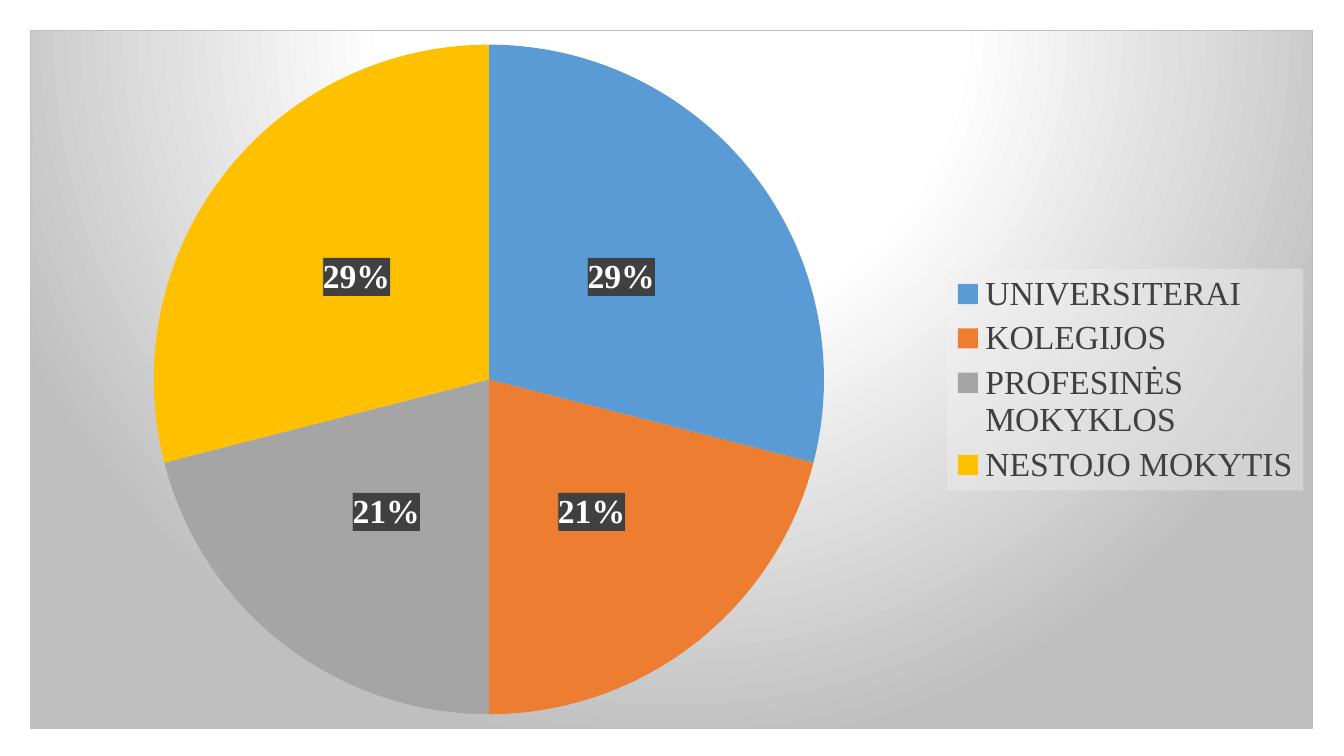
import pptx
import pptx.chart.data
import pptx.dml.color
import pptx.enum.chart
import pptx.oxml
import pptx.oxml.ns
import pptx.util

RGBColor = pptx.dml.color.RGBColor
Inches = pptx.util.Inches
Pt = pptx.util.Pt
qn = pptx.oxml.ns.qn

BLUE = RGBColor(0x5B, 0x9B, 0xD5)
ORANGE = RGBColor(0xED, 0x7D, 0x31)
GREY = RGBColor(0xA5, 0xA5, 0xA5)
GOLD = RGBColor(0xFF, 0xC0, 0x00)
WHITE = RGBColor(0xFF, 0xFF, 0xFF)
DARK = RGBColor(0x40, 0x40, 0x40)
BLACK = RGBColor(0x00, 0x00, 0x00)

CHOICES = [
    ("UNIVERSITERAI", 29, BLUE),
    ("KOLEGIJOS", 21, ORANGE),
    ("PROFESINĖS MOKYKLOS", 21, GREY),
    ("NESTOJO MOKYTIS", 29, GOLD),
]
FONT = "Times New Roman"
PIE_BOX = (0.096, 0.02, 0.523, 0.96)
LEGEND_BOX = (0.715, 0.341, 0.278, 0.318)

NAMESPACES = pptx.oxml.ns.nsdecls("c", "a")
BACKDROP = """<a:gradFill><a:gsLst>
<a:gs pos="0"><a:srgbClr val="FFFFFF"/></a:gs>
<a:gs pos="39000"><a:srgbClr val="FFFFFF"/></a:gs>
<a:gs pos="100000"><a:srgbClr val="BFBFBF"/></a:gs></a:gsLst>
<a:path path="circle"><a:fillToRect l="50000" t="-80000" r="50000" b="180000"/></a:path>
</a:gradFill><a:ln w="9525"><a:solidFill><a:srgbClr val="BFBFBF"/></a:solidFill></a:ln>"""
LEGEND_FILL = """<a:solidFill><a:srgbClr val="F2F2F2"><a:alpha val="39000"/></a:srgbClr>
</a:solidFill><a:ln><a:noFill/></a:ln>"""
LABEL_FILL = """<a:pattFill prst="dkVert"><a:fgClr><a:srgbClr val="404040"/></a:fgClr>
<a:bgClr><a:srgbClr val="595959"/></a:bgClr></a:pattFill><a:ln><a:noFill/></a:ln>"""


def shape_properties(content):
    return pptx.oxml.parse_xml(f"<c:spPr {NAMESPACES}>{content}</c:spPr>")


def manual_layout(box, target=""):
    modes = "".join(f'<c:{axis}Mode val="edge"/>' for axis in "xy")
    sizes = "".join(f'<c:{side} val="{value}"/>' for side, value in zip("xywh", box))
    return pptx.oxml.parse_xml(
        f"<c:layout {NAMESPACES}><c:manualLayout>{target}{modes}{sizes}</c:manualLayout></c:layout>"
    )


def drop_layout(parent):
    for layout in parent.findall(qn("c:layout")):
        parent.remove(layout)


def set_font(font, color, bold=False):
    font.name = FONT
    font.size = Pt(24)
    font.bold = bold
    font.color.rgb = color


deck = pptx.Presentation()
deck.slide_width = Inches(13.33)
deck.slide_height = Inches(7.5)
slide = deck.slides.add_slide(deck.slide_layouts[6])

survey = pptx.chart.data.CategoryChartData()
survey.categories = [name for name, share, color in CHOICES]
survey.add_series("Series 1", [share for name, share, color in CHOICES])
pie = slide.shapes.add_chart(
    pptx.enum.chart.XL_CHART_TYPE.PIE,
    Inches(0.3), Inches(0.3), Inches(12.72), Inches(6.93), survey,
).chart
pie.has_title = False
set_font(pie.font, BLACK)
pie.plots[0].vary_by_categories = True

shares = pie.plots[0].series[0]
for index, (name, share, color) in enumerate(CHOICES):
    slice_format = shares.points[index].format
    slice_format.fill.solid()
    slice_format.fill.fore_color.rgb = color
    slice_format.line.fill.background()

labels = shares.data_labels
labels.show_percentage = True
labels.show_value = False
labels.number_format = "0%"
labels.number_format_is_linked = False
labels.position = pptx.enum.chart.XL_LABEL_POSITION.CENTER
set_font(labels.font, WHITE, True)

pie.has_legend = True
pie.legend.position = pptx.enum.chart.XL_LEGEND_POSITION.RIGHT
pie.legend.include_in_layout = False
set_font(pie.legend.font, DARK)

chart_space = pie.element
chart_space.find(qn("c:chart")).addnext(shape_properties(BACKDROP))
plot_area = chart_space.find(".//" + qn("c:plotArea"))
drop_layout(plot_area)
plot_area.insert(0, manual_layout(PIE_BOX, '<c:layoutTarget val="inner"/>'))
legend = chart_space.find(".//" + qn("c:legend"))
drop_layout(legend)
legend.find(qn("c:legendPos")).addnext(manual_layout(LEGEND_BOX))
legend.find(qn("c:txPr")).addprevious(shape_properties(LEGEND_FILL))
series_labels = chart_space.find(".//" + qn("c:ser") + "/" + qn("c:dLbls"))
series_labels.find(qn("c:txPr")).addprevious(shape_properties(LABEL_FILL))

deck.save("out.pptx")
